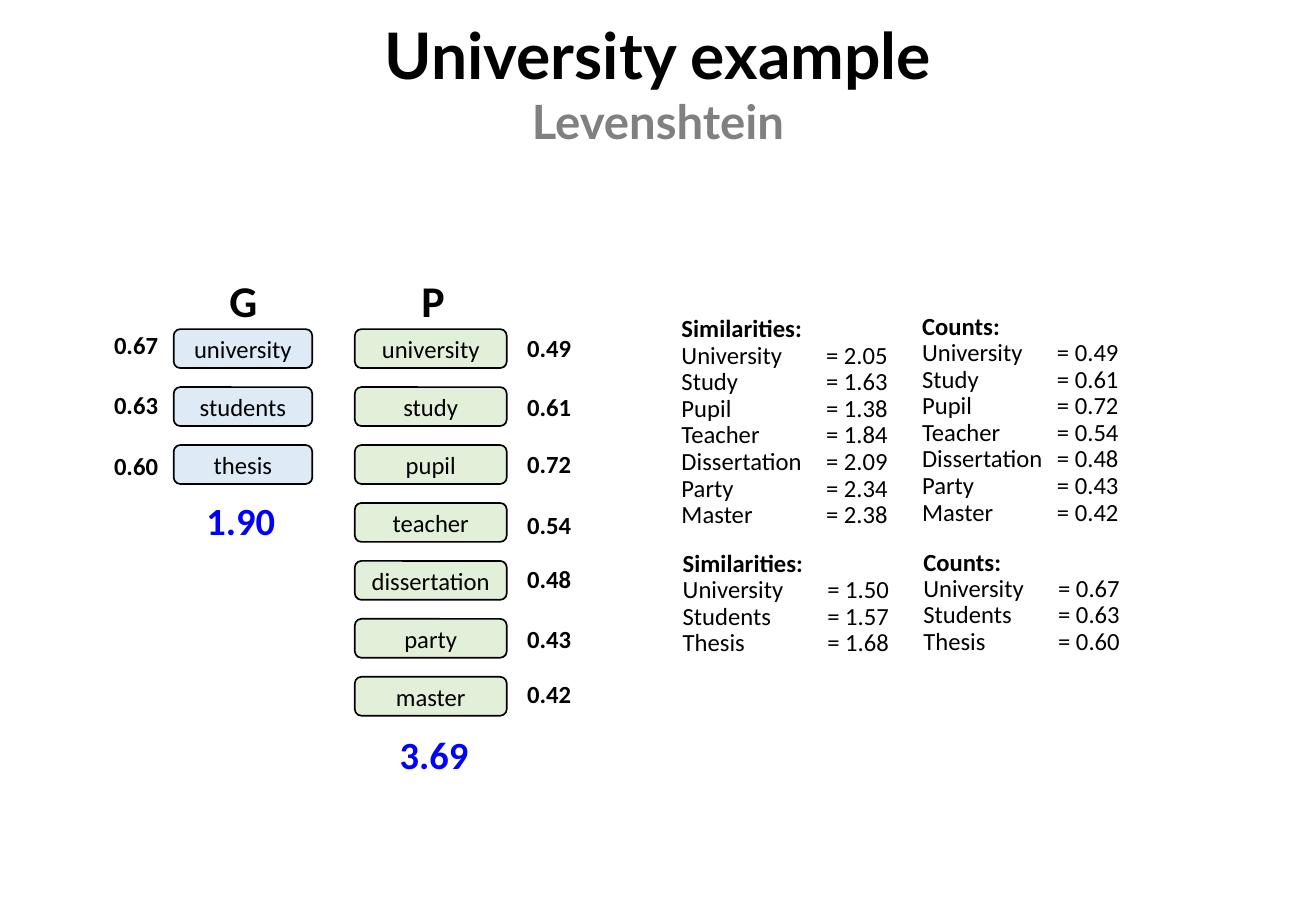
import lxml.etree
import pptx
import pptx.dml.color
import pptx.enum.shapes
import pptx.enum.text
import pptx.oxml.ns
import pptx.util

Inches = pptx.util.Inches
RGBColor = pptx.dml.color.RGBColor
BLACK = RGBColor(0x00, 0x00, 0x00)
GRAY = RGBColor(0x80, 0x80, 0x80)
BLUE = RGBColor(0x00, 0x00, 0xFF)
PALE_BLUE = RGBColor(0xDE, 0xEB, 0xF7)
PALE_GREEN = RGBColor(0xE2, 0xF0, 0xD9)
CENTER = pptx.enum.text.PP_ALIGN.CENTER
MIDDLE = pptx.enum.text.MSO_ANCHOR.MIDDLE
AUTO_SIZE = pptx.enum.text.MSO_AUTO_SIZE


class WordSlide:
    """Draws word boxes, scores and similarity lists on one slide."""

    body_font, title_font = "Calibri", "Lato"
    body_size, total_size, heading_size = 14.6, 22.8, 26

    def __init__(self, deck):
        self.slide = deck.slides.add_slide(deck.slide_layouts[5])

    def add_text(self, paragraph, text, size, color=BLACK, bold=True, font=body_font):
        run = paragraph.add_run()
        run.text = text
        run.font.name = font
        run.font.size = pptx.util.Pt(size)
        run.font.bold = bold
        run.font.color.rgb = color

    def title(self, heading, subheading):
        title = self.slide.shapes.title
        title.left, title.top = Inches(0.18), Inches(0.28)
        title.width, title.height = Inches(10.47), Inches(0.79)
        frame = title.text_frame
        frame.auto_size = AUTO_SIZE.NONE
        frame.vertical_anchor = MIDDLE
        first, second = frame.paragraphs[0], frame.add_paragraph()
        first.alignment = second.alignment = CENTER
        self.add_text(first, heading, 38, font=self.title_font)
        self.add_text(second, subheading, 28, GRAY, font=self.title_font)

    def word(self, text, left, top, width, fill):
        box = self.slide.shapes.add_shape(
            pptx.enum.shapes.MSO_SHAPE.ROUNDED_RECTANGLE,
            Inches(left), Inches(top), Inches(width), Inches(0.32))
        box.shadow.inherit = False
        box.fill.solid()
        box.fill.fore_color.rgb = fill
        box.line.color.rgb = BLACK
        box.line.width = pptx.util.Pt(1)
        frame = box.text_frame
        frame.margin_left = frame.margin_right = 0
        frame.margin_top = frame.margin_bottom = 0
        frame.vertical_anchor = MIDDLE
        frame.paragraphs[0].alignment = CENTER
        self.add_text(frame.paragraphs[0], text, self.body_size, bold=False)

    def text_frame(self, left, top, width, height):
        box = self.slide.shapes.add_textbox(
            Inches(left), Inches(top), Inches(width), Inches(height))
        box.text_frame.word_wrap = False
        box.text_frame.auto_size = AUTO_SIZE.SHAPE_TO_FIT_TEXT
        return box.text_frame

    def label(self, text, left, top, width, height, size, color=BLACK):
        frame = self.text_frame(left, top, width, height)
        self.add_text(frame.paragraphs[0], text, size, color)

    def value_list(self, heading, words, values, left, top, width, height, tab):
        frame = self.text_frame(left, top, width, height)
        self.add_text(frame.paragraphs[0], heading, self.body_size)
        qn = pptx.oxml.ns.qn
        for word, value in zip(words, values):
            row = frame.add_paragraph()
            row.line_spacing = 0.9
            stops = lxml.etree.SubElement(row._p.get_or_add_pPr(), qn("a:tabLst"))
            lxml.etree.SubElement(
                stops, qn("a:tab"), pos=str(Inches(tab)), algn="l")
            self.add_text(row, f"{word.capitalize()}\t= {value}",
                          self.body_size, bold=False)

    def column(self, words, scores, score_tops, left, width, fill, score_left):
        for index, word in enumerate(words):
            self.word(word, left, 2.71 + 0.477 * index, width, fill)
        for score, top in zip(scores, score_tops):
            self.label(score, score_left, top, 0.57, 0.35, self.body_size)


def main():
    deck = pptx.Presentation()
    deck.slide_width, deck.slide_height = Inches(10.83), Inches(7.5)
    slide = WordSlide(deck)
    slide.title("University example", "Levenshtein")

    g_words = ["university", "students", "thesis"]
    g_counts = ["0.67", "0.63", "0.60"]
    p_words = ["university", "study", "pupil", "teacher",
               "dissertation", "party", "master"]
    p_counts = ["0.49", "0.61", "0.72", "0.54", "0.48", "0.43", "0.42"]
    g_similarities = ["1.50", "1.57", "1.68"]
    p_similarities = ["2.05", "1.63", "1.38", "1.84", "2.09", "2.34", "2.38"]

    slide.column(g_words, g_counts, [2.67, 3.16, 3.66],
                 1.43, 1.14, PALE_BLUE, 0.84)
    slide.column(p_words, p_counts, [2.69, 3.18, 3.65, 4.15, 4.59, 5.09, 5.54],
                 2.92, 1.25, PALE_GREEN, 4.24)

    slide.label("G", 1.79, 2.2, 0.44, 0.54, slide.heading_size)
    slide.label("P", 3.37, 2.2, 0.4, 0.54, slide.heading_size)
    slide.label("1.90", 1.6, 4.04, 0.77, 0.48, slide.total_size, BLUE)
    slide.label("3.69", 3.19, 5.97, 0.77, 0.48, slide.total_size, BLUE)

    slide.value_list("Similarities:", p_words, p_similarities,
                     5.51, 2.53, 1.92, 1.9, 1.19)
    slide.value_list("Counts:", p_words, p_counts, 7.49, 2.51, 1.83, 1.9, 1.11)
    slide.value_list("Similarities:", g_words, g_similarities,
                     5.52, 4.46, 1.96, 1.01, 1.19)
    slide.value_list("Counts:", g_words, g_counts, 7.5, 4.45, 1.88, 1.01, 1.11)
    deck.save("out.pptx")


if __name__ == "__main__":
    main()
